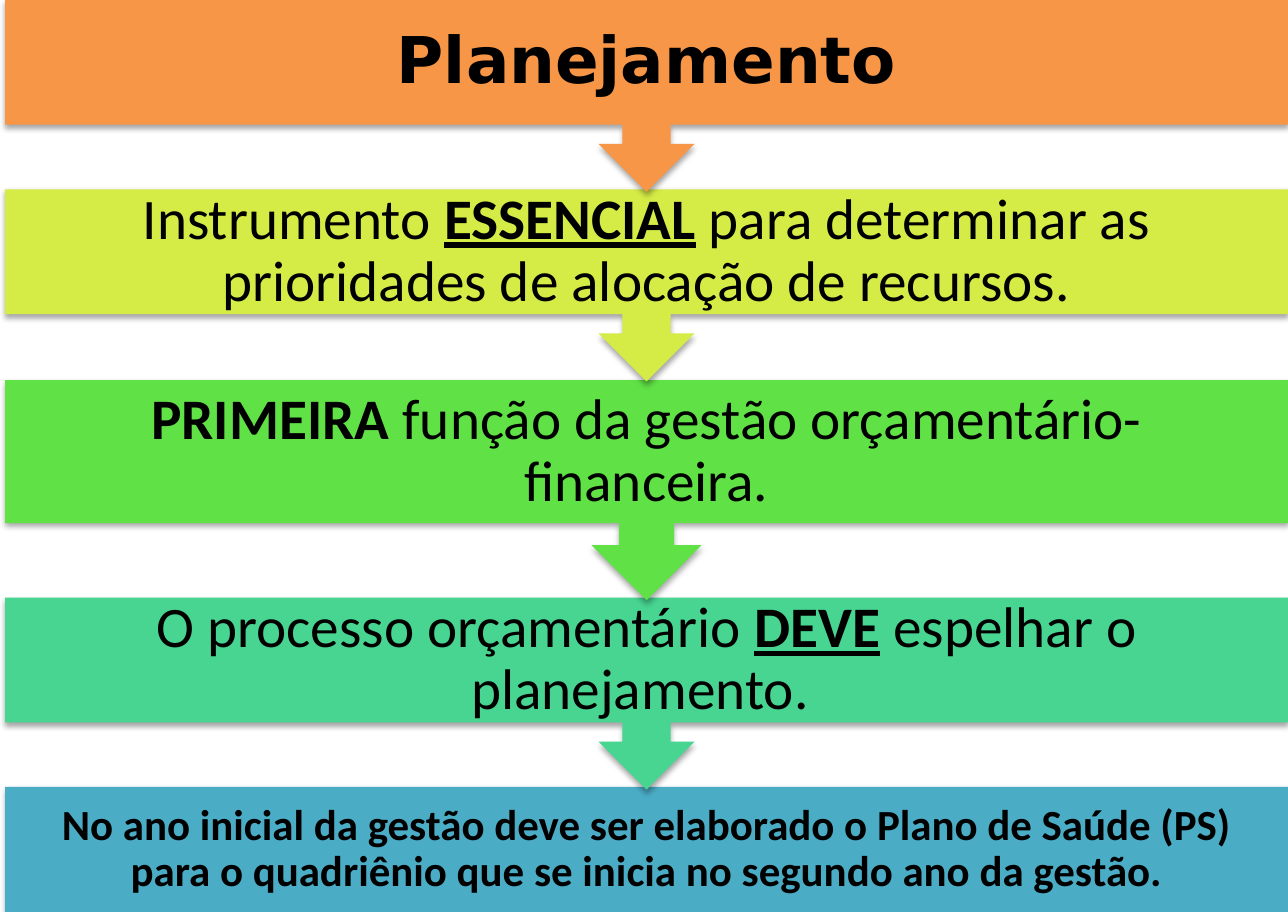
from pptx import Presentation
from pptx.dml.color import RGBColor
from pptx.enum.shapes import MSO_SHAPE
from pptx.enum.text import MSO_ANCHOR, PP_ALIGN
from pptx.oxml import parse_xml
from pptx.oxml.ns import nsdecls
from pptx.util import Inches, Pt

BLACK = RGBColor(0x00, 0x00, 0x00)
ORANGE = RGBColor(0xF7, 0x96, 0x46)
LIME = RGBColor(0xD5, 0xEC, 0x46)
GREEN = RGBColor(0x60, 0xE1, 0x46)
MINT = RGBColor(0x48, 0xD4, 0x91)
BLUE = RGBColor(0x4B, 0xAC, 0xC6)

PLAIN, BOLD, KEY = (False, False), (True, False), (True, True)
ARROW, BAR = MSO_SHAPE.DOWN_ARROW_CALLOUT, MSO_SHAPE.RECTANGLE

# Each step: form, top, height, fill, inset, font, size, runs
STEPS = [
    (ARROW, 0, 1.49, ORANGE, 0.28, "DejaVu Sans", 36,
     [("Planejamento", BOLD)]),
    (ARROW, 1.47, 1.49, LIME, 0.25, "Calibri", 32,
     [("Instrumento ", PLAIN), ("ESSENCIAL", KEY),
      (" para determinar as prioridades de alocação de recursos.", PLAIN)]),
    (ARROW, 2.95, 1.71, GREEN, 0.25, "Calibri", 32,
     [("PRIMEIRA", BOLD),
      (" função da gestão orçamentário-financeira.", PLAIN)]),
    (ARROW, 4.64, 1.49, MINT, 0.25, "Calibri", 32,
     [("O processo orçamentário ", PLAIN), ("DEVE", KEY),
      (" espelhar o planejamento. ", PLAIN)]),
    (BAR, 6.11, 0.97, BLUE, 0.19, "Calibri", 24,
     [("No ano inicial da gestão deve ser elaborado o Plano de Saúde (PS) "
       "para o quadriênio que se inicia no segundo ano da gestão.", BOLD)]),
]


def add_shade(shape):
    """Soft shadow straight below the shape."""
    shape._element.spPr.append(parse_xml(
        f'<a:effectLst {nsdecls("a")}>'
        '<a:outerShdw blurRad="40000" dist="23000" dir="5400000" rotWithShape="0">'
        '<a:srgbClr val="000000"><a:alpha val="35000"/></a:srgbClr>'
        '</a:outerShdw></a:effectLst>'))


def write(frame, runs, inset, font, size):
    """Centred text with equal insets."""
    frame.word_wrap = True
    frame.vertical_anchor = MSO_ANCHOR.MIDDLE
    frame.margin_left = frame.margin_right = Inches(inset)
    frame.margin_top = frame.margin_bottom = Inches(inset)
    para = frame.paragraphs[0]
    para.alignment = PP_ALIGN.CENTER
    para.line_spacing = 0.9
    for text, (bold, under) in runs:
        run = para.add_run()
        run.text = text
        run.font.name = font
        run.font.size = Pt(size)
        run.font.bold = bold
        run.font.underline = under
        run.font.color.rgb = BLACK


def add_step(slide, box, form, fill, inset, font, size, runs):
    """One band of the flow, with its arrow if the form has one."""
    shape = slide.shapes.add_shape(form, *box)
    shape.fill.solid()
    shape.fill.fore_color.rgb = fill
    shape.line.fill.background()
    add_shade(shape)
    write(shape.text_frame, runs, inset, font, size)


def add_flow(slide, left, top, width):
    """Stack the steps from the bottom up, so each arrow overlaps the next band."""
    for form, drop, height, *look in reversed(STEPS):
        box = left, top + Inches(drop), width, Inches(height)
        add_step(slide, box, form, *look)


def main():
    deck = Presentation()
    deck.slide_width, deck.slide_height = Inches(10), Inches(7.08)
    slide = deck.slides.add_slide(deck.slide_layouts[6])
    add_flow(slide, Inches(0.04), Inches(0), Inches(9.96))
    deck.save("out.pptx")


if __name__ == "__main__":
    main()
